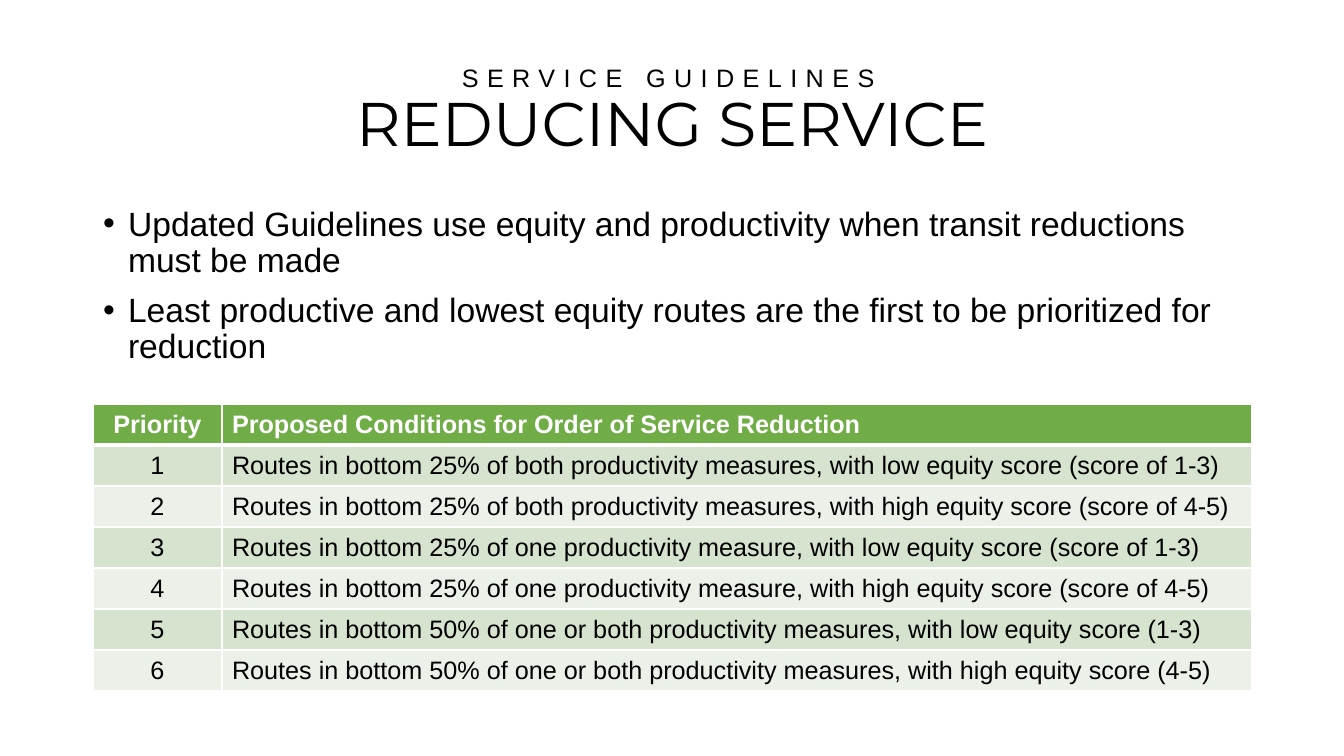
import copy

import lxml.etree
import pptx
import pptx.dml.color
import pptx.enum.text
import pptx.oxml.ns
import pptx.util

PX = 914400 / 100.8
COLORS = {
    "white": "FFFFFF",
    "black": "000000",
    "header": "70AD47",
    "odd": "D5E3CF",
    "even": "EBF1E9",
}
ALIGN = pptx.enum.text.PP_ALIGN
MIDDLE = pptx.enum.text.MSO_ANCHOR.MIDDLE

TITLE_BOX = (93, 40, 1159, 146)
BODY_BOX = (93, 202, 1159, 480)
TABLE_BOX = (93, 404, 1159, 287)
COLUMN_WIDTHS = (129, 1030)
ROW_HEIGHT = 41

BULLETS = [
    "Updated Guidelines use equity and productivity when transit reductions must be made",
    "Least productive and lowest equity routes are the first to be prioritized for reduction",
]
HEADER = ("Priority", "Proposed Conditions for Order of Service Reduction")
CONDITIONS = [
    "Routes in bottom 25% of both productivity measures, with low equity score (score of 1-3)",
    "Routes in bottom 25% of both productivity measures, with high equity score (score of 4-5)",
    "Routes in bottom 25% of one productivity measure, with low equity score (score of 1-3)",
    "Routes in bottom 25% of one productivity measure, with high equity score (score of 4-5)",
    "Routes in bottom 50% of one or both productivity measures, with low equity score (1-3)",
    "Routes in bottom 50% of one or both productivity measures, with high equity score (4-5)",
]


def px(n):
    return pptx.util.Emu(round(n * PX))


def rgb(name):
    return pptx.dml.color.RGBColor.from_string(COLORS[name])


def apply(obj, values):
    for key, value in values.items():
        setattr(obj, key, value)


def place(sp, box):
    apply(sp, dict(zip(("left", "top", "width", "height"), map(px, box))))


def add_run(p, text, size, font="Arial", color="black", bold=False):
    r = p.add_run()
    r.text = text
    apply(r.font, {"name": font, "size": pptx.util.Pt(size), "bold": bold})
    r.font.color.rgb = rgb(color)
    return r


def prepare_frame(sp, box, anchor):
    place(sp, box)
    tf = sp.text_frame
    apply(tf, {
        "word_wrap": True,
        "auto_size": pptx.enum.text.MSO_AUTO_SIZE.NONE,
        "vertical_anchor": anchor,
    })
    return tf


def fill_title(sp):
    p = prepare_frame(sp, TITLE_BOX, MIDDLE).paragraphs[0]
    apply(p, {"alignment": ALIGN.CENTER, "line_spacing": 0.9, "space_before": pptx.util.Pt(0)})
    kicker = add_run(p, "SERVICE GUIDELINES", 18)
    kicker.font._element.set("spc", "600")
    p.add_line_break()
    p._p[-1].append(copy.deepcopy(kicker.font._element))
    add_run(p, "REDUCING SERVICE", 44, "Montserrat")


def fill_bullets(sp):
    tf = prepare_frame(sp, BODY_BOX, pptx.enum.text.MSO_ANCHOR.TOP)
    for i, text in enumerate(BULLETS):
        p = tf.add_paragraph() if i else tf.paragraphs[0]
        apply(p, {"alignment": ALIGN.LEFT, "line_spacing": 0.9, "space_before": pptx.util.Pt(10)})
        ppr = p._p.get_or_add_pPr()
        ppr.set("marL", str(px(25)))
        ppr.set("indent", str(-px(25)))
        bullet = lxml.etree.SubElement(ppr, pptx.oxml.ns.qn("a:buChar"))
        bullet.set("char", "•")
        add_run(p, text, 24)


def add_border(cell, side, width):
    qn = pptx.oxml.ns.qn
    tcpr = cell._tc.get_or_add_tcPr()
    ln = lxml.etree.SubElement(tcpr, qn("a:ln" + side), w=str(pptx.util.Pt(width)))
    solid = lxml.etree.SubElement(ln, qn("a:solidFill"))
    lxml.etree.SubElement(solid, qn("a:srgbClr"), val=COLORS["white"])


def fill_cell(cell, text, align, fill, color, bold, top, bottom):
    for side, width in (("L", 1), ("R", 1), ("T", top), ("B", bottom)):
        add_border(cell, side, width)
    cell.fill.solid()
    cell.fill.fore_color.rgb = rgb(fill)
    cell.vertical_anchor = MIDDLE
    p = cell.text_frame.paragraphs[0]
    p.alignment = align
    add_run(p, text, 18, color=color, bold=bold)


def add_priority_table(slide):
    rows = [HEADER] + [(str(n), text) for n, text in enumerate(CONDITIONS, 1)]
    table = slide.shapes.add_table(len(rows), len(HEADER), *map(px, TABLE_BOX)).table
    for column, width in zip(table.columns, COLUMN_WIDTHS):
        column.width = px(width)
    for i, texts in enumerate(rows):
        table.rows[i].height = px(ROW_HEIGHT)
        head = i == 0
        fill = "header" if head else ("odd" if i % 2 else "even")
        color = "white" if head else "black"
        top, bottom = 3 if i == 1 else 1, 3 if head else 1
        for j, (text, align) in enumerate(zip(texts, (ALIGN.CENTER, ALIGN.LEFT))):
            fill_cell(table.cell(i, j), text, align, fill, color, head, top, bottom)


def main():
    prs = pptx.Presentation()
    apply(prs, {"slide_width": px(1344), "slide_height": px(756)})
    slide = prs.slides.add_slide(prs.slide_layouts[1])
    fill_title(slide.shapes.title)
    fill_bullets(slide.placeholders[1])
    add_priority_table(slide)
    prs.save("out.pptx")


if __name__ == "__main__":
    main()
